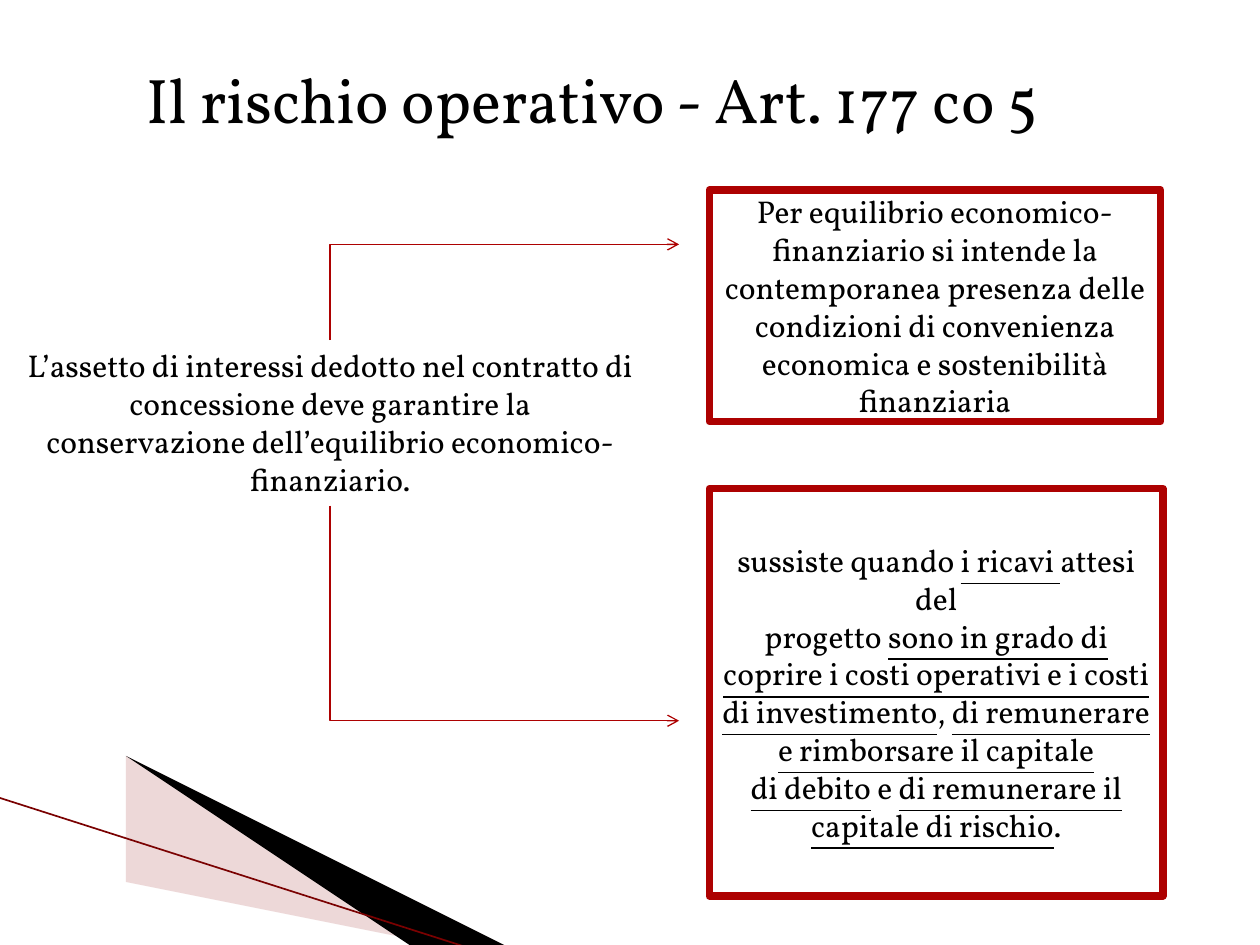
from dataclasses import dataclass

from lxml.etree import SubElement
from pptx import Presentation
from pptx.dml.color import RGBColor
from pptx.enum.shapes import MSO_CONNECTOR, MSO_SHAPE
from pptx.enum.text import MSO_ANCHOR, MSO_AUTO_SIZE, PP_ALIGN
from pptx.oxml.ns import qn
from pptx.util import Inches, Pt

WIDTH, HEIGHT = 10, 7.5
FONT = "Vollkorn"
RED, BLACK, WHITE = "AD0101", "000000", "FFFFFF"


@dataclass(frozen=True)
class Area:
    """A rectangle given as shares of the slide's size."""
    left: float
    top: float
    width: float
    height: float

    def lengths(self) -> tuple:
        return (Inches(self.left * WIDTH), Inches(self.top * HEIGHT),
                Inches(self.width * WIDTH), Inches(self.height * HEIGHT))


@dataclass(frozen=True)
class Span:
    text: str
    underline: bool = False


@dataclass(frozen=True)
class Panel:
    area: Area
    paragraphs: list


@dataclass(frozen=True)
class Wedge:
    points: list
    color: str
    opacity: int = 100


def rgb(color: str) -> RGBColor:
    return RGBColor.from_string(color)


def write(shape, paragraphs: list, *, size: int = 18, color: str = BLACK,
          anchor=MSO_ANCHOR.TOP, wrap: bool = True,
          fit=MSO_AUTO_SIZE.NONE) -> None:
    frame = shape.text_frame
    frame.word_wrap, frame.auto_size = wrap, fit
    frame.vertical_anchor = anchor
    for index, spans in enumerate(paragraphs):
        para = frame.add_paragraph() if index else frame.paragraphs[0]
        para.alignment = PP_ALIGN.CENTER
        for span in spans:
            run = para.add_run()
            run.text = span.text
            run.font.name, run.font.size = FONT, Pt(size)
            run.font.color.rgb = rgb(color)
            if span.underline:
                run.font.underline = True


def draw_wedge(page, wedge: Wedge) -> None:
    builder = page.shapes.build_freeform(*wedge.points[0], scale=Inches(1))
    builder.add_line_segments(wedge.points[1:], close=True)
    shape = builder.convert_to_shape()
    shape.shadow.inherit = False
    shape.fill.solid()
    shape.fill.fore_color.rgb = rgb(wedge.color)
    shape.line.fill.background()
    if wedge.opacity < 100:
        fill = shape.element.spPr.find(qn("a:solidFill"))
        SubElement(fill[0], qn("a:alpha"), val=str(wedge.opacity * 1000))


def draw_panel(page, panel: Panel) -> None:
    box = page.shapes.add_shape(MSO_SHAPE.RECTANGLE, *panel.area.lengths())
    box.shadow.inherit = False
    box.fill.solid()
    box.fill.fore_color.rgb = rgb(WHITE)
    box.line.color.rgb = rgb(RED)
    box.line.width = Pt(4.33)
    write(box, panel.paragraphs, anchor=MSO_ANCHOR.MIDDLE)


def draw_line(page, kind, start: tuple, end: tuple, color: str, weight: float):
    line = page.shapes.add_connector(
        kind, *(Inches(value) for value in (*start, *end)))
    line.line.color.rgb = rgb(color)
    line.line.width = Pt(weight)
    SubElement(line.element.spPr, qn("a:effectLst"))
    return line


def draw_elbow(page, start: tuple, end: tuple) -> None:
    """Arrow that leaves vertically and turns right, as a rotated connector."""
    across, down = end[0] - start[0], end[1] - start[1]
    middle_x, middle_y = (start[0] + end[0]) / 2, (start[1] + end[1]) / 2
    # Before the quarter turn, width and height are swapped
    left, right = middle_x - abs(down) / 2, middle_x + abs(down) / 2
    top, bottom = middle_y - across / 2, middle_y + across / 2
    rises = down < 0
    first, last = (bottom, top) if rises else (top, bottom)
    line = draw_line(page, MSO_CONNECTOR.ELBOW, (right, first), (left, last),
                     RED, 0.75)
    properties = line.element.spPr
    properties.find(qn("a:xfrm")).set("rot", str((90 if rises else 270) * 60000))
    properties.find(qn("a:prstGeom")).set("prst", "bentConnector2")
    SubElement(properties.find(qn("a:ln")), qn("a:tailEnd"), type="arrow")


WEDGES = [
    Wedge([(0.55, 6.51), (5.95, 7.51), (4.56, 7.51), (0.55, 6.5)], "D29E9E", 40),
    Wedge([(0.53, 6.49), (4.57, 7.51), (3.72, 7.52), (0.54, 6.5)], BLACK),
]

TITLE = Area(0.081, 0.057, 0.778, 0.095)
CLAIM = Area(0.012, 0.36, 0.5, 0.175)

PANELS = [
    Panel(Area(0.563, 0.201, 0.358, 0.245), [[Span(
        "Per equilibrio economico-finanziario si intende la contemporanea "
        "presenza delle condizioni di convenienza economica e sostenibilità "
        "finanziaria")]]),
    Panel(Area(0.563, 0.517, 0.36, 0.431), [
        [Span("sussiste quando "), Span("i ricavi ", True), Span("attesi del")],
        [Span("progetto "),
         Span("sono in grado di coprire i costi operativi e i costi di "
              "investimento", True),
         Span(", "), Span("di remunerare e rimborsare il capitale", True)],
        [Span("di debito", True), Span(" e "),
         Span("di remunerare il capitale di rischio", True), Span(".")],
    ]),
]


def main() -> None:
    deck = Presentation()
    deck.slide_width, deck.slide_height = Inches(WIDTH), Inches(HEIGHT)
    page = deck.slides.add_slide(deck.slide_layouts[5])
    page.background.fill.solid()
    page.background.fill.fore_color.rgb = rgb(WHITE)

    # Corner decoration
    for wedge in WEDGES:
        draw_wedge(page, wedge)
    draw_line(page, MSO_CONNECTOR.STRAIGHT, (-0.01, 6.33), (3.71, 7.52),
              "7A0101", 0.95)

    # Title
    title = page.shapes.title
    title.left, title.top, title.width, title.height = TITLE.lengths()
    write(title, [[Span("Il rischio operativo - Art. 177 co 5")]], size=36,
          wrap=False, fit=MSO_AUTO_SIZE.SHAPE_TO_FIT_TEXT)

    # Claim on the left
    claim = page.shapes.add_textbox(*CLAIM.lengths())
    write(claim, [[Span(
        "L’assetto di interessi dedotto nel contratto di concessione deve "
        "garantire la conservazione dell’equilibrio economico-finanziario.")]],
        fit=MSO_AUTO_SIZE.SHAPE_TO_FIT_TEXT)

    # Definitions on the right
    for panel in PANELS:
        draw_panel(page, panel)

    # Arrows from the claim's top and bottom towards the definitions
    center = (CLAIM.left + CLAIM.width / 2) * WIDTH
    claim_top = CLAIM.top * HEIGHT
    claim_bottom = claim_top + CLAIM.height * HEIGHT
    draw_elbow(page, (center, claim_top), (5.39, 1.94))
    draw_elbow(page, (center, claim_bottom), (5.39, 5.72))

    deck.save("out.pptx")


if __name__ == "__main__":
    main()
